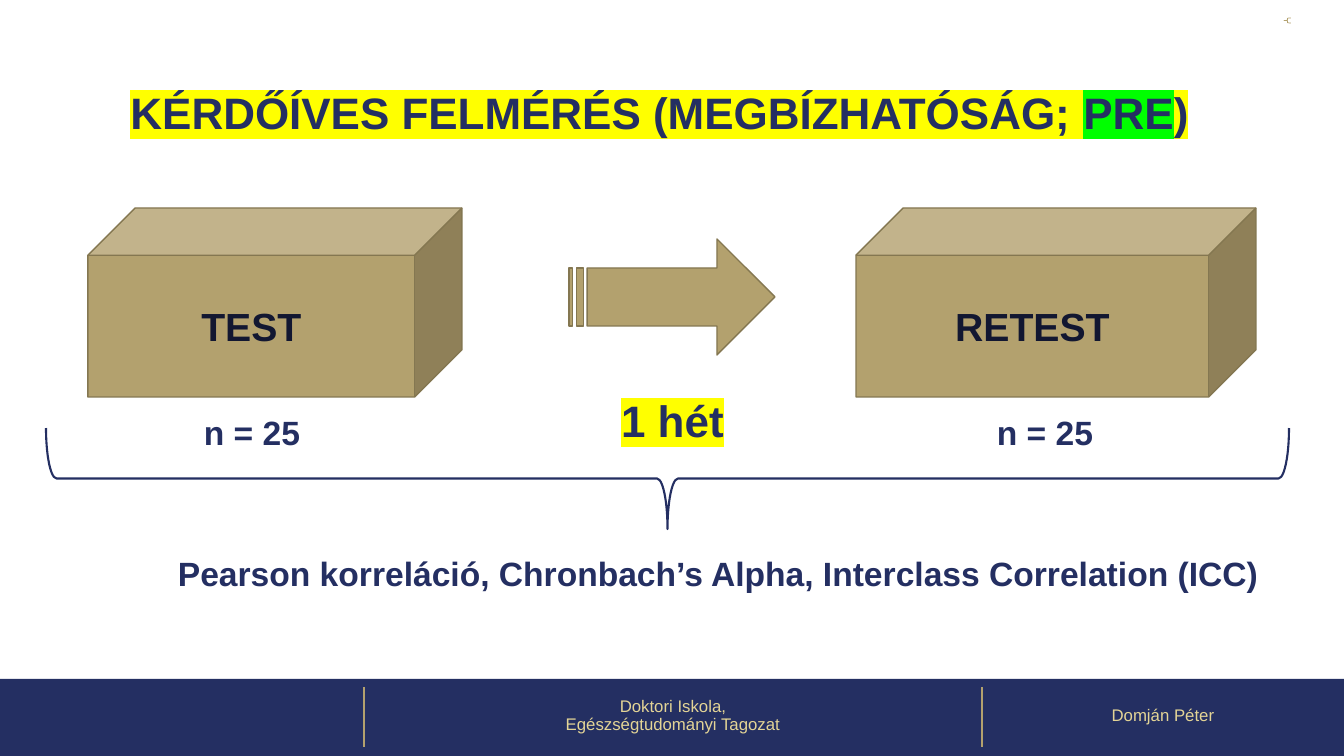
from lxml import etree
from pptx import Presentation
from pptx import util as u
from pptx.dml.color import RGBColor
from pptx.enum import shapes, text
from pptx.oxml.ns import qn

EMU_PER_PX = 914400 / 100.8
FONT = "Arial"
COLORS = {
    "navy": "242F62", "dark": "121731", "gold": "B3A16E", "bronze": "847751",
    "sand": "E3D496", "yellow": "FFFF00", "green": "00FF00",
}


def px(value):
    return u.Emu(round(value * EMU_PER_PX))


def color(name):
    return RGBColor.from_string(COLORS[name])


def format_run(run, size, color_name, bold=True, highlight=None):
    font = run.font
    font.name, font.size, font.bold = FONT, u.Pt(size), bold
    font.color.rgb = color(color_name)
    if highlight:
        mark = etree.Element(qn("a:highlight"))
        etree.SubElement(mark, qn("a:srgbClr"), val=COLORS[highlight])
        run._r.rPr.find(qn("a:solidFill")).addnext(mark)


def add_shape(slide, kind, box, fill=None, line=None, width=1):
    shape = slide.shapes.add_shape(kind, *map(px, box))
    shape.shadow.inherit = False
    if fill:
        shape.fill.solid()
        shape.fill.fore_color.rgb = color(fill)
    else:
        shape.fill.background()
    if line:
        shape.line.color.rgb = color(line)
        shape.line.width = u.Pt(width)
    else:
        shape.line.fill.background()
    return shape


def add_label(slide, box, content, size, color_name="navy", bold=True, wrap=True,
              align=text.PP_ALIGN.CENTER, anchor=text.MSO_ANCHOR.TOP,
              spacing=None, highlight=None):
    frame = slide.shapes.add_textbox(*map(px, box)).text_frame
    frame.word_wrap = wrap
    frame.vertical_anchor = anchor
    frame.text = content
    for paragraph in frame.paragraphs:
        paragraph.alignment = align
        if spacing:
            paragraph.line_spacing = spacing
        for run in paragraph.runs:
            format_run(run, size, color_name, bold, highlight)


def add_footer(slide, left, top, width, height):
    add_shape(slide, shapes.MSO_SHAPE.RECTANGLE, (left, top, width, height), "navy")
    dividers = (left + 364, left + 982)
    for x in dividers:
        line = slide.shapes.add_connector(
            shapes.MSO_CONNECTOR.STRAIGHT, px(x), px(top + 8), px(x), px(top + 68))
        line.line.color.rgb = color("gold")
        line.line.width = u.Pt(1.5)
        etree.SubElement(line._element.spPr, qn("a:effectLst"))
    edges = (*dividers, left + width)
    names = ("Doktori Iskola,\nEgészségtudományi Tagozat", "Domján Péter")
    for start, end, name in zip(edges, edges[1:], names):
        add_label(slide, (start, top - 3, end - start, 80), name, 12, "sand",
                  bold=False, anchor=text.MSO_ANCHOR.MIDDLE, spacing=0.9)


def add_title(slide, left, top, width, height):
    title = slide.shapes.title
    title.left, title.top, title.width, title.height = map(px, (left, top, width, height))
    frame = title.text_frame
    frame.auto_size = text.MSO_AUTO_SIZE.NONE
    frame.vertical_anchor = text.MSO_ANCHOR.TOP
    paragraph = frame.paragraphs[0]
    paragraph.alignment = text.PP_ALIGN.CENTER
    paragraph.line_spacing = 0.7
    for words, highlight in (("KÉRDŐÍVES FELMÉRÉS (MEGBÍZHATÓSÁG; ", "yellow"),
                             ("PRE", "green"), (")", "yellow")):
        run = paragraph.add_run()
        run.text = words
        format_run(run, 31.4, "navy", highlight=highlight)


def add_survey(slide, left, top, width, height, name, sample_left):
    """A cube with its sample size below."""
    cube = add_shape(slide, shapes.MSO_SHAPE.CUBE, (left, top, width, height),
                     "gold", "bronze")
    frame = cube.text_frame
    frame.text = name
    frame.vertical_anchor = text.MSO_ANCHOR.MIDDLE
    frame.paragraphs[0].alignment = text.PP_ALIGN.CENTER
    format_run(frame.paragraphs[0].runs[0], 28, "dark")
    add_label(slide, (sample_left, top + height + 10, 117, 50), "n = 25", 24,
              wrap=False, align=text.PP_ALIGN.LEFT)


def add_interval(slide, left, top, width, height):
    add_shape(slide, shapes.MSO_SHAPE.STRIPED_RIGHT_ARROW, (left, top, width, height),
              "gold", "bronze")
    add_label(slide, (93, top + height + 48, 1159, 47), "1 hét", 31.4,
              spacing=0.7, highlight="yellow")


def add_analysis(slide, left, top, width, height):
    """A brace lying across the box, with the statistics below."""
    upright = (left + (width - height) / 2, top + (height - width) / 2, height, width)
    brace = add_shape(slide, shapes.MSO_SHAPE.RIGHT_BRACE, upright, line="navy", width=1.5)
    brace.rotation = 90
    brace.adjustments[0] = 0.104
    add_label(slide, (left + 122, top + height + 19, 1120, 50),
              "Pearson korreláció, Chronbach’s Alpha, Interclass Correlation (ICC)",
              24, wrap=False, align=text.PP_ALIGN.LEFT)


def main():
    presentation = Presentation()
    presentation.slide_width, presentation.slide_height = px(1344), px(756)
    slide = presentation.slides.add_slide(presentation.slide_layouts[5])

    add_footer(slide, 0, 679, 1344, 77)
    add_title(slide, 80, 95, 1159, 47)

    # Test, waiting time, retest
    add_survey(slide, 88, 208, 374, 189, "TEST", 194)
    add_interval(slide, 569, 239, 206, 116)
    add_survey(slide, 856, 208, 400, 189, "RETEST", 987)

    add_analysis(slide, 46, 428, 1243, 101)

    # Small corner brace
    add_shape(slide, shapes.MSO_SHAPE.LEFT_BRACE, (1284, 18, 7, 5), line="gold", width=0.5)

    presentation.save("out.pptx")


if __name__ == "__main__":
    main()
